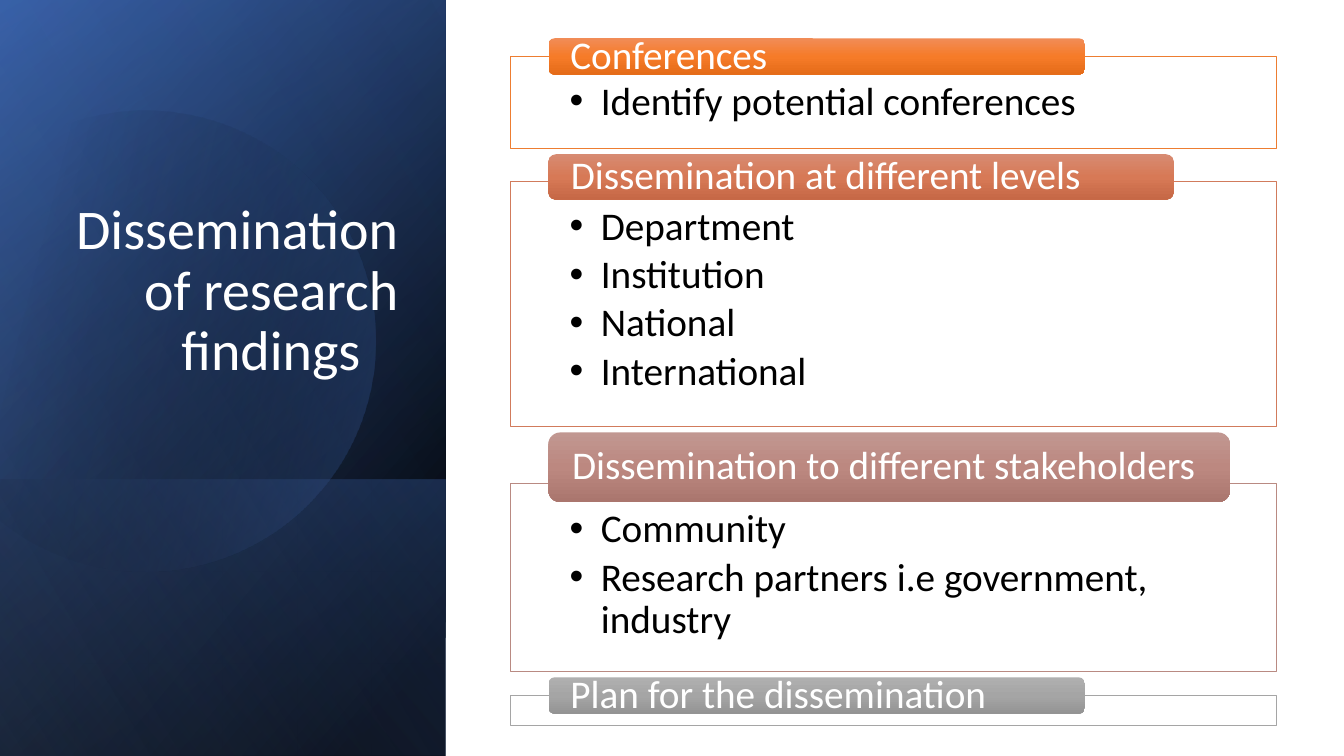
from dataclasses import dataclass
from math import acos, cos, degrees, radians, sin

from lxml.etree import SubElement
from pptx import Presentation
from pptx.dml.color import RGBColor
from pptx.enum.shapes import MSO_SHAPE
from pptx.enum.text import MSO_ANCHOR, MSO_AUTO_SIZE, PP_ALIGN
from pptx.oxml.ns import qn
from pptx.util import Pt

EMU_PER_PX = 9144


@dataclass(frozen=True)
class Theme:
    font: str = "Calibri"
    title_size: int = 40
    text_size: int = 28
    line_spacing: float = 0.9
    white: str = "FFFFFF"
    black: str = "000000"
    navy: str = "2F5597"
    blue: str = "4472C4"
    pale_blue: str = "8FAADC"


THEME = Theme()

# Outline colour, tab gradient, tab width, tab height, frame height, heading, bullets
SECTIONS = [
    ("ED7D31", ("F18C57", "F67B28", "E56C19"), 532, 36, 91,
     "Conferences", ["Identify potential conferences"]),
    ("D17B5C", ("D78B72", "D77956", "C66846"), 620, 45, 243,
     "Dissemination at different levels",
     ["Department", "Institution", "National", "International"]),
    ("B98A82", ("C19791", "BC8880", "AA766E"), 676, 69, 186,
     "Dissemination to different stakeholders",
     ["Community", "Research partners i.e government, industry"]),
    ("A5A5A5", ("AFAFAF", "A5A5A5", "939393"), 532, 36, 30,
     "Plan for the dissemination", []),
]


def px(length):
    return round(length * EMU_PER_PX)


def add_colour(parent, colour, alpha):
    element = SubElement(parent, qn("a:srgbClr"), val=colour)
    if alpha < 100:
        SubElement(element, qn("a:alpha"), val=str(alpha * 1000))


def fill_gradient(shape, stops, angle):
    """Stops are (position, colour, opacity), both numbers in percent."""
    shape.fill.background()
    placeholder_fill = shape.element.spPr.find(qn("a:noFill"))
    gradient = placeholder_fill.makeelement(qn("a:gradFill"), {"rotWithShape": "1"})
    stop_list = SubElement(gradient, qn("a:gsLst"))
    for position, colour, alpha in stops:
        stop = SubElement(stop_list, qn("a:gs"), pos=str(position * 1000))
        add_colour(stop, colour, alpha)
    SubElement(gradient, qn("a:lin"), ang=str(angle * 60000), scaled="0")
    shape.element.spPr.replace(placeholder_fill, gradient)


def fill_solid(shape, colour, alpha):
    shape.fill.solid()
    shape.fill.fore_color.rgb = RGBColor.from_string(colour)
    colour_element = shape.element.spPr.find(qn("a:solidFill"))[0]
    SubElement(colour_element, qn("a:alpha"), val=str(alpha * 1000))


def add_box(slide, kind, left, top, width, height):
    shape = slide.shapes.add_shape(kind, px(left), px(top), px(width), px(height))
    shape.shadow.inherit = False
    shape.line.fill.background()
    return shape


def write_text(shape, lines, *, size, colour, insets, anchor,
               align=PP_ALIGN.LEFT, bullet=False, space_after=0):
    frame = shape.text_frame
    frame.word_wrap = True
    frame.auto_size = MSO_AUTO_SIZE.NONE
    frame.vertical_anchor = anchor
    (frame.margin_left, frame.margin_top,
     frame.margin_right, frame.margin_bottom) = map(px, insets)
    for index, line in enumerate(lines):
        paragraph = frame.add_paragraph() if index else frame.paragraphs[0]
        paragraph.alignment = align
        paragraph.line_spacing = THEME.line_spacing
        paragraph.space_before = Pt(0)
        paragraph.space_after = Pt(space_after)
        if bullet:
            paragraph.level = 1
            properties = paragraph._p.get_or_add_pPr()
            properties.set("marL", str(px(31)))
            properties.set("indent", str(px(-31)))
            SubElement(properties, qn("a:buFont"), typeface="Arial")
            SubElement(properties, qn("a:buChar"), char="•")
        run = paragraph.add_run()
        run.text = line
        run.font.name = THEME.font
        run.font.size = Pt(size)
        run.font.color.rgb = RGBColor.from_string(colour)


def add_turned_panel(slide, box, stops, angle):
    """Cover the box with a mirrored rectangle turned by a quarter."""
    left, top, width, height = box
    panel = add_box(slide, MSO_SHAPE.RECTANGLE, left + (width - height) / 2,
                    top + (height - width) / 2, height, width)
    panel.rotation = 90
    panel.element.spPr.find(qn("a:xfrm")).set("flipH", "1")
    fill_gradient(panel, stops, angle)


def add_clipped_disc(slide, left, top):
    """A disc cut by a vertical chord once it has been turned."""
    radius, chord_distance, turn = 228.5, 159, 16.1
    center_x, center_y = left + 143.5, top + 334.5
    reach = degrees(acos(-chord_distance / radius))
    steps = 120
    angles = [radians(turn - reach + 2 * reach * step / steps)
              for step in range(steps + 1)]
    points = [(px(center_x + radius * cos(angle)), px(center_y + radius * sin(angle)))
              for angle in angles]
    builder = slide.shapes.build_freeform(*points[0])
    builder.add_line_segments(points[1:], close=True)
    disc = builder.convert_to_shape()
    disc.shadow.inherit = False
    disc.line.fill.background()
    disc.rotation = 360 - turn
    fill_gradient(disc, [(29, THEME.black, 0), (100, THEME.blue, 43)], 30)


def build_title_panel(slide, left, top, width, height):
    whole = (left, top, width, height)
    lower = (left, top + height - 274, width, 274)

    # Layered background
    add_turned_panel(slide, whole, [(8, THEME.black, 100), (100, THEME.navy, 100)], 50)
    add_turned_panel(slide, whole, [(0, THEME.black, 0), (99, THEME.blue, 46)], 30)
    add_turned_panel(slide, lower, [(2, THEME.blue, 29), (100, THEME.black, 30)], 130)
    add_clipped_disc(slide, left, top)
    add_turned_panel(slide, whole, [(0, THEME.black, 0), (99, THEME.pale_blue, 11)], 120)

    # Title, in front of the background
    title = slide.shapes.title
    title.left, title.top, title.width, title.height = map(
        px, (left + 64, top + 184, 341, 262))
    write_text(title, ["Dissemination of research findings   "],
               size=THEME.title_size, colour=THEME.white, insets=(10, 5, 10, 66),
               anchor=MSO_ANCHOR.BOTTOM, align=PP_ALIGN.RIGHT)
    slide.shapes._spTree.append(title.element)


def build_sections(slide, left, top, width):
    tab_indent, tab_overlap, gap = 38, 18, 6
    tab_top = top
    for outline, shades, tab_width, tab_height, frame_height, heading, items in SECTIONS:
        # Frame with its list
        frame_top = tab_top + tab_height - tab_overlap
        frame = add_box(slide, MSO_SHAPE.RECTANGLE, left, frame_top, width, frame_height)
        fill_solid(frame, THEME.white, 90)
        frame.line.color.rgb = RGBColor.from_string(outline)
        frame.line.width = Pt(0.5)
        if items:
            write_text(frame, items, size=THEME.text_size, colour=THEME.black,
                       insets=(59, 25, 59, 22), anchor=MSO_ANCHOR.TOP,
                       bullet=True, space_after=THEME.text_size * 0.15)

        # Heading tab
        tab = add_box(slide, MSO_SHAPE.ROUNDED_RECTANGLE, left + tab_indent, tab_top,
                      tab_width, tab_height)
        fill_gradient(tab, [(position, shade, 100)
                            for position, shade in zip((0, 50, 100), shades)], 90)
        write_text(tab, [heading], size=THEME.text_size, colour=THEME.white,
                   insets=(20, 0, 20, 0), anchor=MSO_ANCHOR.MIDDLE)
        tab_top = frame_top + frame_height + gap


def main():
    presentation = Presentation()
    presentation.slide_width, presentation.slide_height = px(1333), px(750)
    slide = presentation.slides.add_slide(presentation.slide_layouts[5])
    build_title_panel(slide, 0, 0, 442, 750)
    build_sections(slide, 506, 38, 760)
    presentation.save("out.pptx")


if __name__ == "__main__":
    main()
